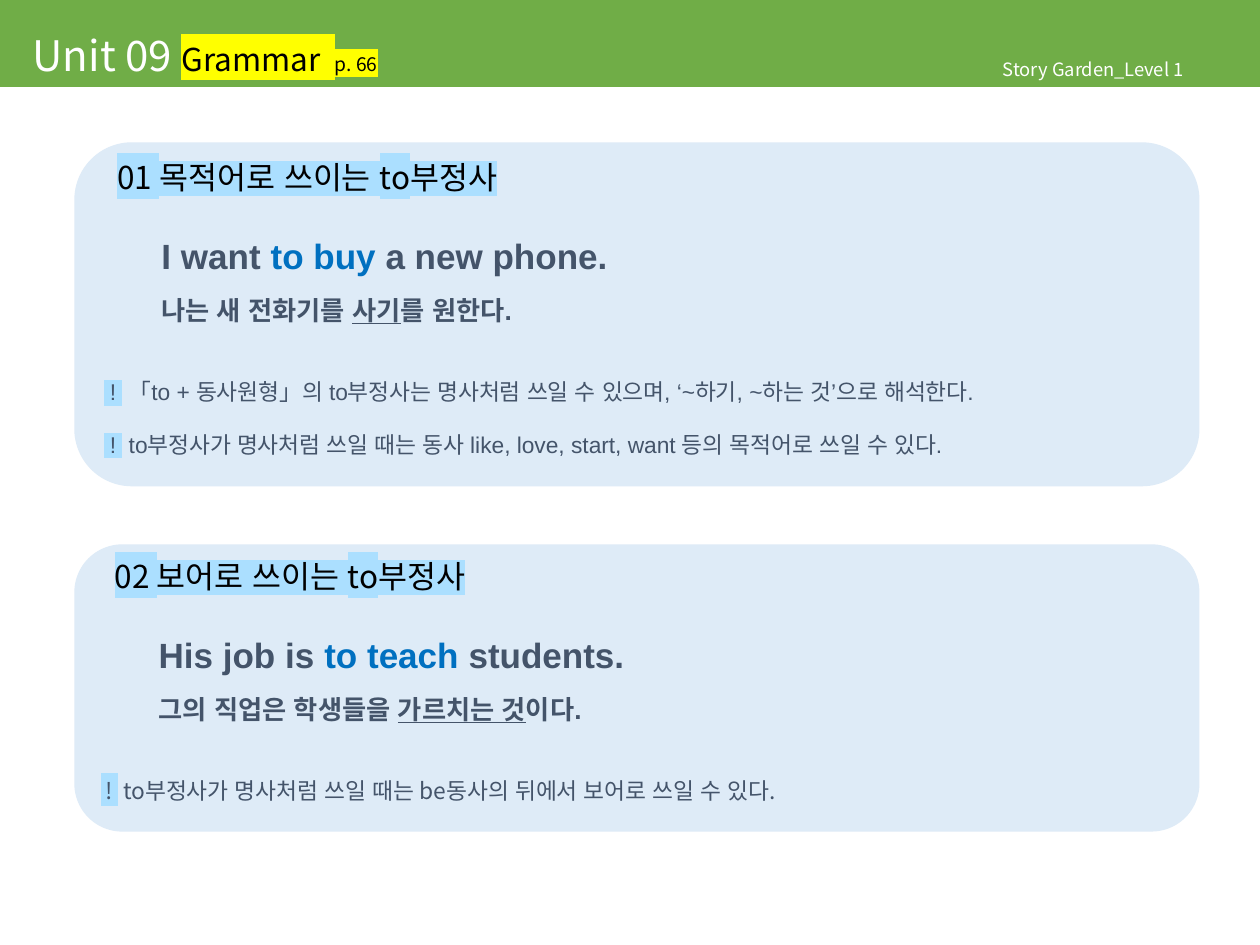
from pptx import Presentation
from pptx import util as u
from pptx.dml.color import RGBColor
from pptx.enum import shapes, text
from pptx.oxml.ns import qn
from lxml import etree

KOREAN, LATIN = "Noto Sans CJK KR", "Arial"
SLATE, BLUE, BLACK, WHITE = "44546A", "0070C0", "000000", "FFFFFF"
SKY, YELLOW = "ABDFFF", "FFFF00"

deck = Presentation()
deck.slide_width, deck.slide_height = u.Inches(10), u.Inches(7.5)
page = deck.slides.add_slide(deck.slide_layouts[6])


def add_block(kind, left, top, width, height, fill):
    """Add a plain filled shape and return its text frame."""
    box = page.shapes.add_shape(kind, *map(u.Inches, (left, top, width, height)))
    box.shadow.inherit = False
    box.line.fill.background()
    box.fill.solid()
    box.fill.fore_color.rgb = RGBColor.from_string(fill)
    if kind == shapes.MSO_SHAPE.ROUNDED_RECTANGLE:
        box.adjustments[0] = 0.167
    return box.text_frame


def write(para, spans, font=KOREAN, spacing=1.0, before=0, indent=0):
    """Fill a paragraph with (words, size, colour, highlight, style) spans."""
    para.alignment = text.PP_ALIGN.LEFT
    para.line_spacing = spacing
    para.space_before = u.Pt(before)
    if indent:
        para._p.get_or_add_pPr().set("marL", str(u.Inches(indent)))
    for words, size, colour, highlight, style in spans:
        span = para.add_run()
        span.text = words
        span.font.size = u.Pt(size)
        span.font.bold = "b" in style
        span.font.underline = True if "u" in style else None
        span.font.color.rgb = RGBColor.from_string(colour)
        props = span._r.get_or_add_rPr()
        if highlight:
            mark = etree.SubElement(props, qn("a:highlight"))
            etree.SubElement(mark, qn("a:srgbClr"), val=highlight)
        for script, face in (("a:latin", font), ("a:ea", LATIN)):
            etree.SubElement(props, qn(script), typeface=face)


# Title bar
title = add_block(shapes.MSO_SHAPE.RECTANGLE, 0, 0, 10, 0.69, "70AD47")
title.vertical_anchor = text.MSO_ANCHOR.BOTTOM
title.margin_left, title.margin_top, title.margin_bottom = u.Inches(0.26), 0, u.Inches(0.06)
write(title.paragraphs[0], [("Unit 09 ", 24, WHITE, None, ""),
                            ("Grammar  ", 18, BLACK, YELLOW, ""),
                            ("p. 66", 11, BLACK, YELLOW, "")])

# Book name
book = page.shapes.add_textbox(*map(u.Inches, (7.89, 0.44, 1.93, 0.26))).text_frame
book.word_wrap = True
book.margin_left = book.margin_right = u.Inches(0.07)
book.margin_top = book.margin_bottom = u.Inches(0.04)
write(book.paragraphs[0], [("Story Garden_Level 1", 10.5, WHITE, None, "")], spacing=0.9)

# Grammar panels: top, height, heading, sentence parts, translation parts, note font, notes
panels = [
    (1.13, 2.73, "01 목적어로 쓰이는 to부정사",
     ("I want ", "to buy ", "a new phone."),
     ("나는 새 전화기를 ", "사기", "를 원한다."), LATIN,
     ["「to + 동사원형」의 to부정사는 명사처럼 쓰일 수 있으며, ‘~하기, ~하는 것’으로 해석한다.",
      "to부정사가 명사처럼 쓰일 때는 동사 like, love, start, want 등의 목적어로 쓰일 수 있다."]),
    (4.32, 2.28, "02 보어로 쓰이는 to부정사",
     ("His job is ", "to teach ", "students."),
     ("그의 직업은 학생들을 ", "가르치는 것", "이다."), KOREAN,
     ["to부정사가 명사처럼 쓰일 때는 be동사의 뒤에서 보어로 쓰일 수 있다."]),
]
for top, height, heading, sentence, translation, note_font, notes in panels:
    frame = add_block(shapes.MSO_SHAPE.ROUNDED_RECTANGLE, 0.59, top, 8.93, height, "DEEBF7")
    frame.vertical_anchor = text.MSO_ANCHOR.TOP
    frame.word_wrap = False
    write(frame.paragraphs[0], [(heading, 18, BLACK, SKY, "")], spacing=0.8, indent=0.11)
    write(frame.add_paragraph(),
          [(words, 20, colour, None, "b")
           for words, colour in zip(sentence, (SLATE, BLUE, SLATE))],
          LATIN, spacing=0.8, before=27, indent=0.46)
    write(frame.add_paragraph(),
          [(words, 15, SLATE, None, style)
           for words, style in zip(translation, ("b", "bu", "b"))],
          LATIN, spacing=0.8, before=13.5, indent=0.46)
    for number, note in enumerate(notes):
        write(frame.add_paragraph(),
              [(" ! ", 13, SLATE, SKY, ""), (" " + note, 13, SLATE, None, "")],
              note_font, before=14.5 if number else 30)

deck.save("out.pptx")
